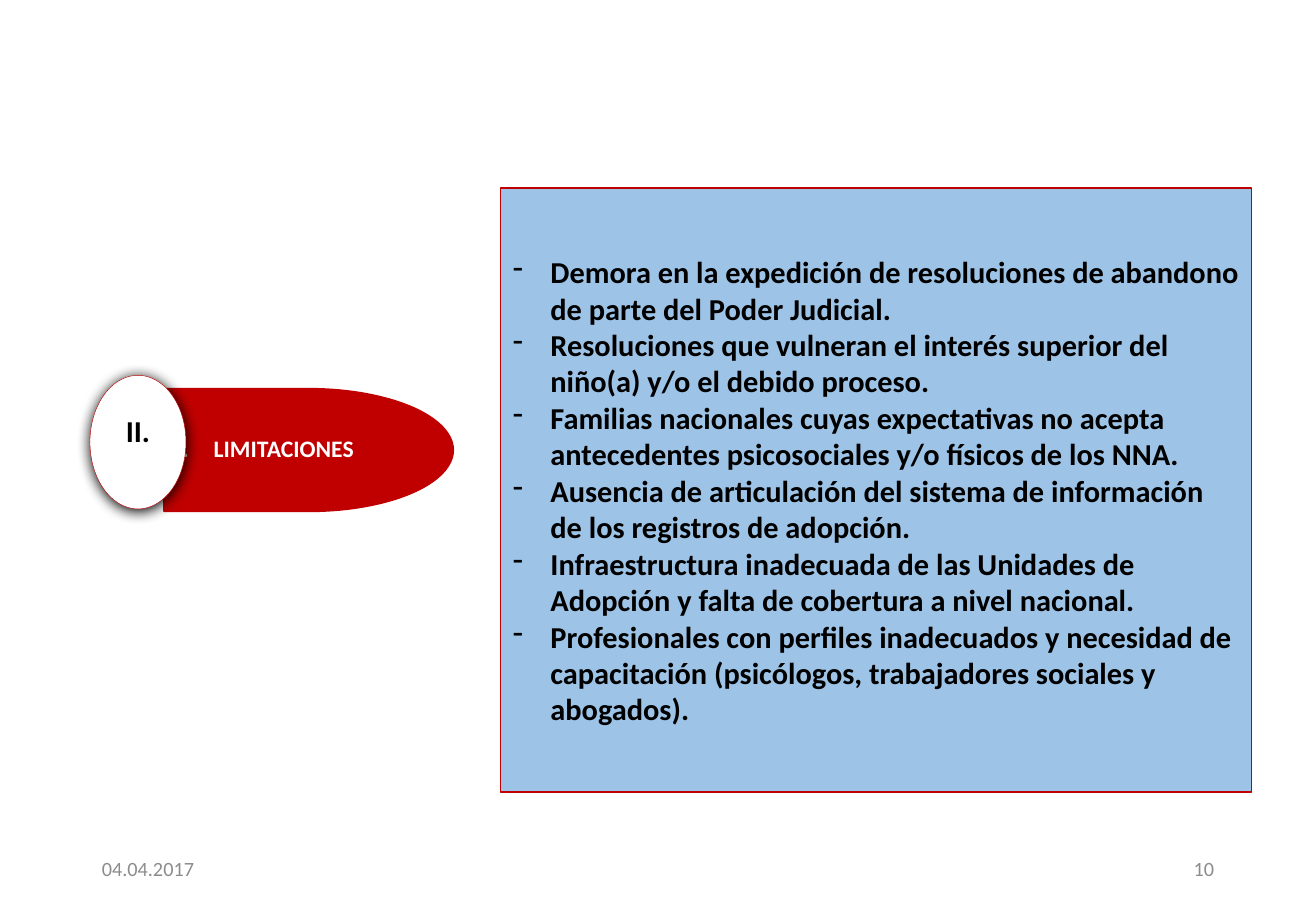
from dataclasses import dataclass

from lxml import etree
from pptx import Presentation
from pptx.dml.color import RGBColor
from pptx.enum import shapes, text
from pptx.oxml import ns
from pptx.util import Inches, Pt


@dataclass(frozen=True)
class Theme:
    font: str = "Calibri"
    red: str = "C00000"
    blue: str = "9DC3E6"
    white: str = "FFFFFF"
    black: str = "000000"
    grey: str = "8C8C8C"
    body: int = 18
    label: int = 14
    footer: int = 12
    indent: float = 0.31


THEME = Theme()
LIMITATIONS = [
    "Demora en la expedición de resoluciones de abandono de parte del Poder Judicial.",
    "Resoluciones que vulneran el interés superior del niño(a) y/o el debido proceso.",
    "Familias nacionales cuyas expectativas no acepta antecedentes psicosociales y/o físicos de los NNA.",
    "Ausencia de articulación del sistema de información de los registros de adopción.",
    "Infraestructura inadecuada de las Unidades de Adopción y falta de cobertura a nivel nacional.",
    "Profesionales con perfiles inadecuados y necesidad de capacitación "
    "(psicólogos, trabajadores sociales y abogados).",
]


def inches(box):
    return [Inches(v) for v in box]


def paint(sp, fill, line_width):
    sp.fill.solid()
    sp.fill.fore_color.rgb = RGBColor.from_string(fill)
    sp.line.color.rgb = RGBColor.from_string(THEME.red)
    sp.line.width = Pt(line_width)


def add_bullet(p, tag, **attributes):
    """Give the paragraph a hanging indent and a bullet element."""
    pPr = p._p.get_or_add_pPr()
    pPr.set("marL", str(Inches(THEME.indent)))
    pPr.set("indent", str(-Inches(THEME.indent)))
    etree.SubElement(pPr, ns.qn(tag), attributes)


def write(p, words, size, color, bold=True):
    r = p.add_run()
    r.text = words
    formats = {"name": THEME.font, "size": Pt(size), "bold": bold}
    for name, value in formats.items():
        setattr(r.font, name, value)
    r.font.color.rgb = RGBColor.from_string(color)


def add_text(parent, box, words, size, color, bold=True,
             align=text.PP_ALIGN.LEFT, anchor=text.MSO_ANCHOR.TOP, numbering=None):
    tf = parent.add_textbox(*inches(box)).text_frame
    tf.word_wrap = True
    tf.vertical_anchor = anchor
    p = tf.paragraphs[0]
    p.alignment = align
    if numbering:
        add_bullet(p, "a:buFont", typeface="+mj-lt")
        add_bullet(p, "a:buAutoNum", type=numbering)
    write(p, words, size, color, bold)


def add_glow_shadow(sp):
    effects = sp._element.spPr.find(ns.qn("a:effectLst"))
    shadow = etree.SubElement(effects, ns.qn("a:outerShdw"), {
        "blurRad": str(Pt(8.5)), "dist": str(Pt(1)), "dir": "5400000",
        "algn": "t", "rotWithShape": "0"})
    etree.SubElement(shadow, ns.qn("a:srgbClr"), val=THEME.black)


def add_section_tag(s, box):
    """Red section label with its numeral in a white oval at the left."""
    x, y, w, h = box
    parts = s.shapes.add_group_shape().shapes
    kinds = shapes.MSO_SHAPE
    oval_w, label_x = 0.79, x + 0.61
    label_w = w - 0.61

    label = parts.add_shape(kinds.FLOWCHART_DELAY,
                            *inches((label_x, y + 0.11, label_w, h - 0.11)))
    label.shadow.inherit = False
    paint(label, THEME.red, 1)
    add_text(parts, (label_x, y + 0.43, label_w, 0.52), "LIMITACIONES",
             THEME.label, THEME.white, numbering="romanUcPeriod")

    oval = parts.add_shape(kinds.OVAL, *inches((x, y, oval_w, h - 0.02)))
    oval.shadow.inherit = False
    paint(oval, THEME.white, 0.25)
    add_glow_shadow(oval)
    add_text(parts, (x + 0.04, y + 0.25, oval_w - 0.08, 0.63), "II.",
             THEME.body, THEME.black, align=text.PP_ALIGN.CENTER)


def add_limitations(s, box):
    sp = s.placeholders[1]
    sp.left, sp.top, sp.width, sp.height = inches(box)
    paint(sp, THEME.blue, 1)
    tf = sp.text_frame
    formats = {"word_wrap": True, "auto_size": text.MSO_AUTO_SIZE.NONE,
               "vertical_anchor": text.MSO_ANCHOR.MIDDLE,
               "margin_right": Inches(0.08)}
    for name, value in formats.items():
        setattr(tf, name, value)
    for i, words in enumerate(LIMITATIONS):
        p = tf.add_paragraph() if i else tf.paragraphs[0]
        p.space_before = Pt(0)
        add_bullet(p, "a:buFontTx")
        add_bullet(p, "a:buChar", char="-")
        write(p, words, THEME.body, THEME.black)


def add_footer(s, box):
    x, y, w, h = box
    field_w = 2.44
    fields = [(x, "04.04.2017", text.PP_ALIGN.LEFT),
              (x + w - field_w, "10", text.PP_ALIGN.RIGHT)]
    for left, words, align in fields:
        add_text(s.shapes, (left, y, field_w, h), words, THEME.footer, THEME.grey,
                 bold=False, align=align, anchor=text.MSO_ANCHOR.MIDDLE)


def main():
    prs = Presentation()
    prs.slide_width, prs.slide_height = Inches(10.83), Inches(7.5)
    s = prs.slides.add_slide(prs.slide_layouts[1])
    title = s.shapes.title._element
    title.getparent().remove(title)
    add_section_tag(s, (0.74, 3.09, 2.99, 1.12))
    add_limitations(s, (4.12, 1.55, 6.18, 4.97))
    add_footer(s, (0.74, 6.95, 9.35, 0.4))
    prs.save("out.pptx")


if __name__ == "__main__":
    main()
